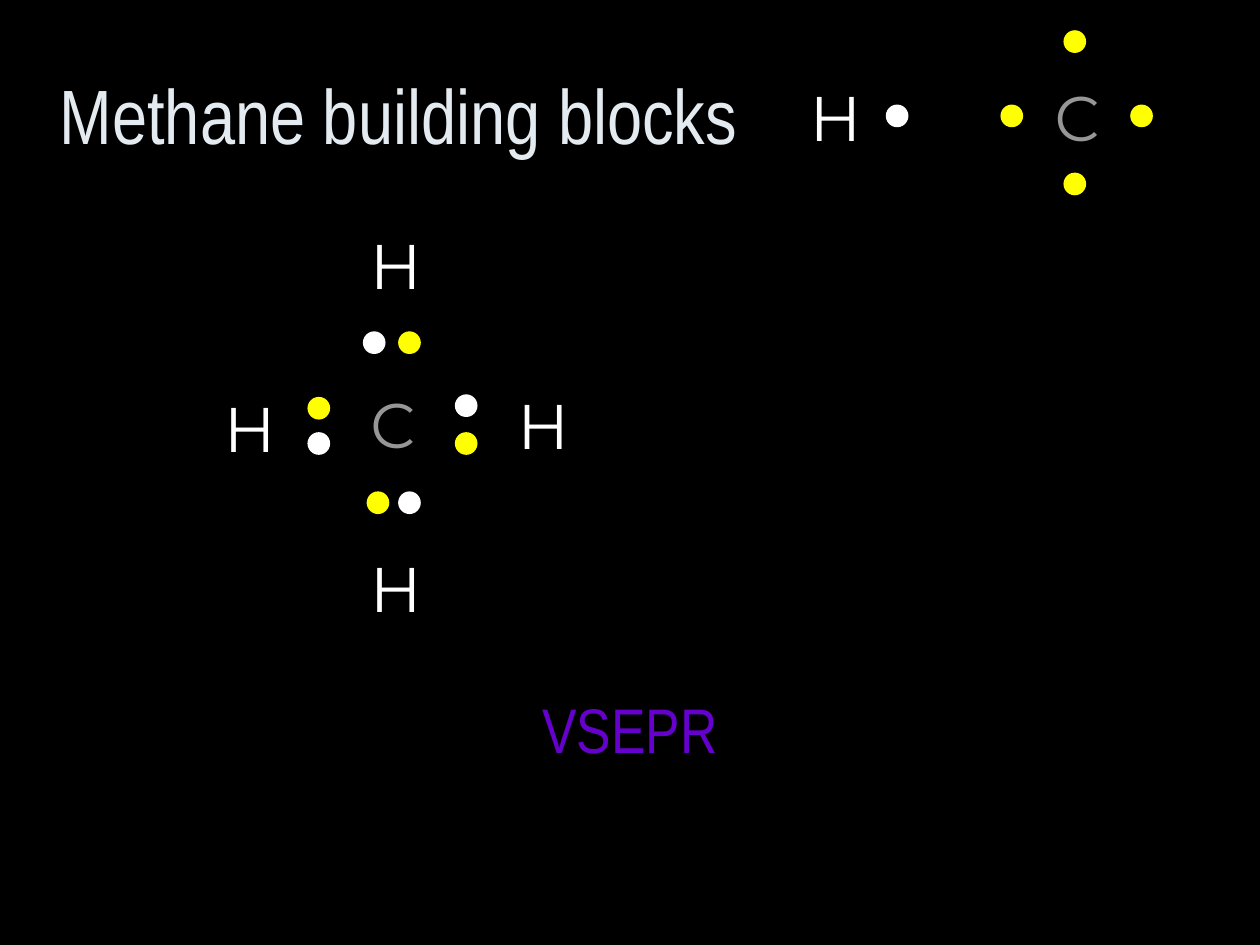
from dataclasses import dataclass
from pptx import Presentation
from pptx.dml.color import RGBColor
from pptx.enum.shapes import MSO_SHAPE as Preset
from pptx.enum.text import MSO_ANCHOR as Anchor, PP_ALIGN as Align
from pptx.util import Inches, Pt


@dataclass(frozen=True)
class Theme:
    background: str = "000000"
    title: str = "E3EBF1"
    hydrogen: str = "FFFFFF"
    carbon: str = "969696"
    carbon_electron: str = "FFFF00"
    vsepr: str = "6600CC"
    heading_font: str = "Arial Narrow"
    atom_font: str = "Montserrat"
    title_size: int = 44
    label_size: int = 36


THEME = Theme()
ATOM_SIZE = (0.56, 0.71)
ELECTRON_SIZE = 0.18


def add_label(shapes, text, box, font, size, color, wrap=False, anchor=Anchor.TOP):
    label = shapes.add_textbox(*map(Inches, box))
    frame = label.text_frame
    frame.word_wrap = wrap
    frame.vertical_anchor = anchor
    frame.text = text
    paragraph = frame.paragraphs[0]
    paragraph.alignment = Align.CENTER
    run_font = paragraph.runs[0].font
    run_font.name = font
    run_font.size = Pt(size)
    run_font.color.rgb = RGBColor.from_string(color)


def add_atom(shapes, symbol, left, top):
    color = THEME.carbon if symbol == "C" else THEME.hydrogen
    add_label(shapes, symbol, (left, top, *ATOM_SIZE),
              THEME.atom_font, THEME.label_size, color)


def add_electrons(shapes, color, positions):
    for left, top in positions:
        electron = shapes.add_shape(
            Preset.OVAL, Inches(left), Inches(top),
            Inches(ELECTRON_SIZE), Inches(ELECTRON_SIZE))
        electron.shadow.inherit = False
        electron.fill.solid()
        electron.fill.fore_color.rgb = RGBColor.from_string(color)
        electron.line.fill.background()


def add_building_blocks(shapes):
    add_atom(shapes, "H", 6.33, 0.57)
    add_atom(shapes, "C", 8.27, 0.57)
    add_electrons(shapes, THEME.hydrogen, [(7.03, 0.83)])
    add_electrons(shapes, THEME.carbon_electron,
                  [(7.94, 0.83), (8.44, 1.37), (8.44, 0.24), (8.97, 0.83)])


def add_methane(shapes):
    molecule = shapes.add_group_shape().shapes
    add_atom(molecule, "C", 2.84, 3.01)
    for left, top in [(1.68, 3.04), (2.84, 1.75), (4.01, 3.02), (2.84, 4.31)]:
        add_atom(molecule, "H", left, top)
    add_electrons(molecule, THEME.carbon_electron,
                  [(2.44, 3.15), (2.91, 3.9), (3.16, 2.63), (3.61, 3.43)])
    add_electrons(molecule, THEME.hydrogen,
                  [(2.44, 3.43), (2.88, 2.63), (3.61, 3.13), (3.16, 3.9)])


def main():
    deck = Presentation()
    deck.slide_width, deck.slide_height = Inches(10), Inches(7.5)
    slide = deck.slides.add_slide(deck.slide_layouts[6])
    slide.background.fill.solid()
    slide.background.fill.fore_color.rgb = RGBColor.from_string(THEME.background)

    add_label(slide.shapes, "Methane building blocks", (0.31, 0.39, 5.71, 1.03),
              THEME.heading_font, THEME.title_size, THEME.title,
              wrap=True, anchor=Anchor.MIDDLE)
    add_building_blocks(slide.shapes)
    add_methane(slide.shapes)
    add_label(slide.shapes, "VSEPR", (3.16, 5.43, 3.68, 1.04),
              THEME.heading_font, THEME.label_size, THEME.vsepr)
    deck.save("out.pptx")


if __name__ == "__main__":
    main()
